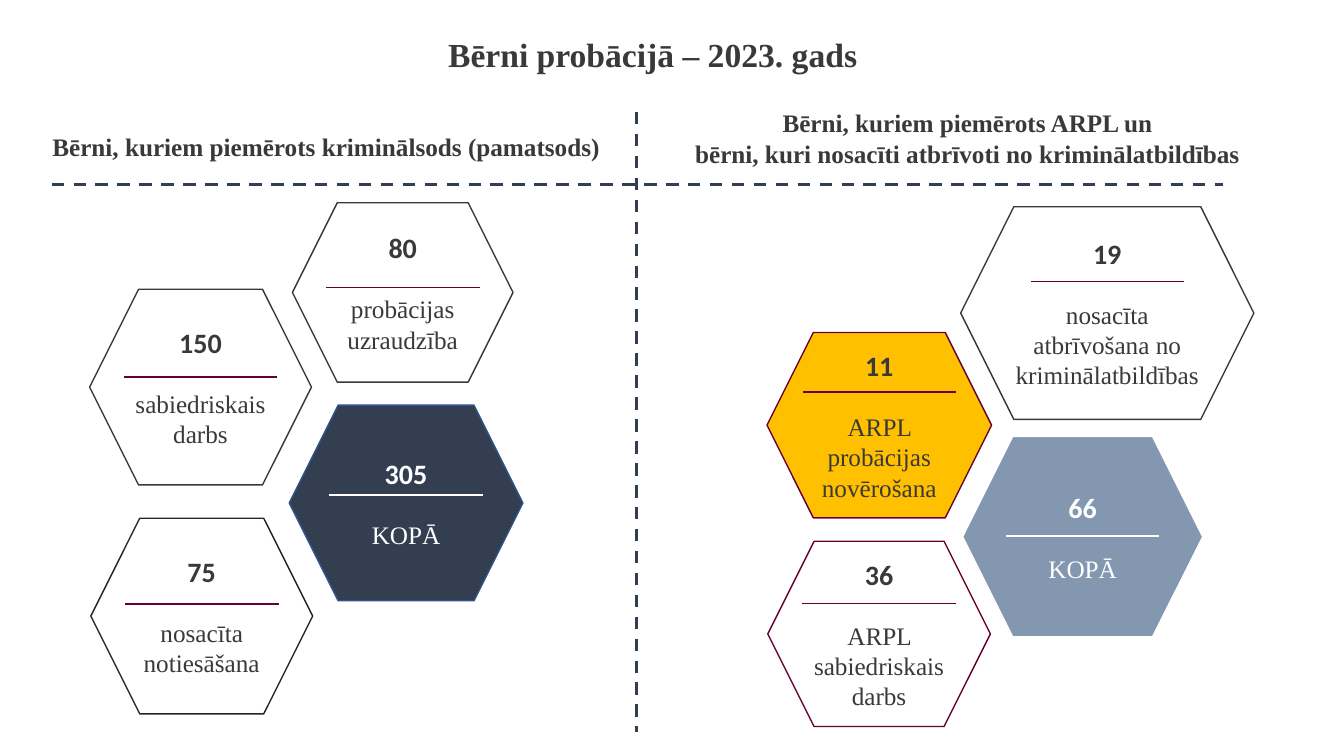
from lxml.etree import SubElement
from pptx import Presentation
from pptx.dml.color import RGBColor
from pptx.enum.dml import MSO_LINE
from pptx.enum.shapes import MSO_CONNECTOR, MSO_SHAPE
from pptx.enum.text import MSO_ANCHOR, PP_ALIGN
from pptx.oxml.ns import qn
from pptx.util import Cm, Pt

DARK, NAVY, PLUM, WHITE = "3B3838", "333F50", "660033", "FFFFFF"
SERIF, SANS = "Times New Roman", "Calibri"
RULE_LENGTH = 3.87


def color(value):
    return RGBColor.from_string(value)


def write(p, text, size=18, font=SERIF, ink=DARK, bold=False,
          align=PP_ALIGN.CENTER, before=0):
    p.alignment = align
    p.space_before = Pt(before)
    r = p.add_run()
    r.text = text
    r.font.size = Pt(size)
    r.font.name = font
    r.font.bold = bold
    r.font.color.rgb = color(ink)


def add_line(s, x1, y1, x2, y2, ink, width=1, dash=None):
    line = s.shapes.add_connector(MSO_CONNECTOR.STRAIGHT,
                                  Cm(x1), Cm(y1), Cm(x2), Cm(y2))
    line.line.color.rgb = color(ink)
    line.line.width = Pt(width)
    if dash:
        line.line.dash_style = dash
    SubElement(line._element.spPr, qn("a:effectLst"))


def add_text(s, x, y, w, h, lines, **fmt):
    tf = s.shapes.add_textbox(Cm(x), Cm(y), Cm(w), Cm(h)).text_frame
    tf.word_wrap = True
    for i, text in enumerate(lines):
        p = tf.add_paragraph() if i else tf.paragraphs[0]
        write(p, text, bold=True, **fmt)


def add_hexagon(s, x, y, w, h, count, label, rule_y, fill=WHITE, outline=DARK,
                ink=DARK, rule=PLUM):
    """Hexagon with a count above a centred rule and a label below it."""
    sp = s.shapes.add_shape(MSO_SHAPE.HEXAGON, Cm(x), Cm(y), Cm(w), Cm(h))
    sp.shadow.inherit = False
    if fill:
        sp.fill.solid()
        sp.fill.fore_color.rgb = color(fill)
    else:
        sp.fill.background()
    sp.line.color.rgb = color(outline)
    sp.line.width = Pt(1)
    tf = sp.text_frame
    tf.word_wrap = True
    tf.vertical_anchor = MSO_ANCHOR.MIDDLE
    write(tf.paragraphs[0], count, size=20, font=SANS, ink=ink, bold=True)
    write(tf.add_paragraph(), label, ink=ink, before=21)
    start = x + (w - RULE_LENGTH) / 2
    add_line(s, start, y + rule_y, start + RULE_LENGTH, y + rule_y, rule)


def add_title(s, x, y, w, h):
    add_text(s, x, y, w, h, ["Bērni probācijā – 2023. gads"], size=24)


def add_dividers(s, x, y, w, h):
    """Dashed cross: a header rule and a line between the two panels."""
    middle, header = x + 14.75, y + 1.83
    add_line(s, middle, y, middle, y + h, NAVY, 2.25, MSO_LINE.DASH)
    add_line(s, x, header, x + w, header, NAVY, 2.25, MSO_LINE.DASH)


def add_sentence_panel(s, x, y, w):
    add_text(s, x, y + 0.59, w, 1.02,
             ["Bērni, kuriem piemērots kriminālsods (pamatsods)"],
             align=PP_ALIGN.LEFT)
    add_hexagon(s, x + 1.19, y + 4.7, 5.59, 4.93, "150",
                "sabiedriskais darbs", 2.21)
    add_hexagon(s, x + 6.3, y + 2.52, 5.56, 4.52, "80",
                "probācijas uzraudzība", 2.13)
    add_hexagon(s, x + 1.22, y + 10.47, 5.59, 4.93, "75",
                "nosacīta notiesāšana", 2.16, fill=None, outline="262626")
    add_hexagon(s, x + 6.22, y + 7.62, 5.89, 4.93, "305", "KOPĀ", 2.26,
                fill=NAVY, outline="325491", ink=WHITE, rule=WHITE)


def add_measures_panel(s, x, y, w):
    add_text(s, x, y, w, 1.8,
             ["Bērni, kuriem piemērots ARPL un",
              "bērni, kuri nosacīti atbrīvoti no kriminālatbildības"])
    add_hexagon(s, x + 2.9, y + 5.79, 5.66, 4.67, "11",
                "ARPL probācijas novērošana", 1.5, fill="FFC000", outline=PLUM)
    add_hexagon(s, x + 7.78, y + 2.62, 7.39, 5.36, "19",
                "nosacīta atbrīvošana no kriminālatbildības", 1.88)
    add_hexagon(s, x + 7.83, y + 8.41, 6.05, 5.05, "66", "KOPĀ", 2.51,
                fill="8497B0", outline=WHITE, ink=WHITE, rule=WHITE)
    add_hexagon(s, x + 2.92, y + 11.05, 5.61, 4.67, "36",
                "ARPL sabiedriskais darbs", 1.57, fill=None, outline=PLUM)


def main():
    prs = Presentation()
    prs.slide_width, prs.slide_height = Cm(33.87), Cm(19.05)
    s = prs.slides.add_slide(prs.slide_layouts[6])
    add_title(s, 1.07, 0.74, 30.76, 1.27)
    add_dividers(s, 1.3, 2.82, 29.51, 15.62)
    add_sentence_panel(s, 1.07, 2.59, 14.61)
    add_measures_panel(s, 16.43, 2.59, 15.9)
    prs.save("out.pptx")


if __name__ == "__main__":
    main()
